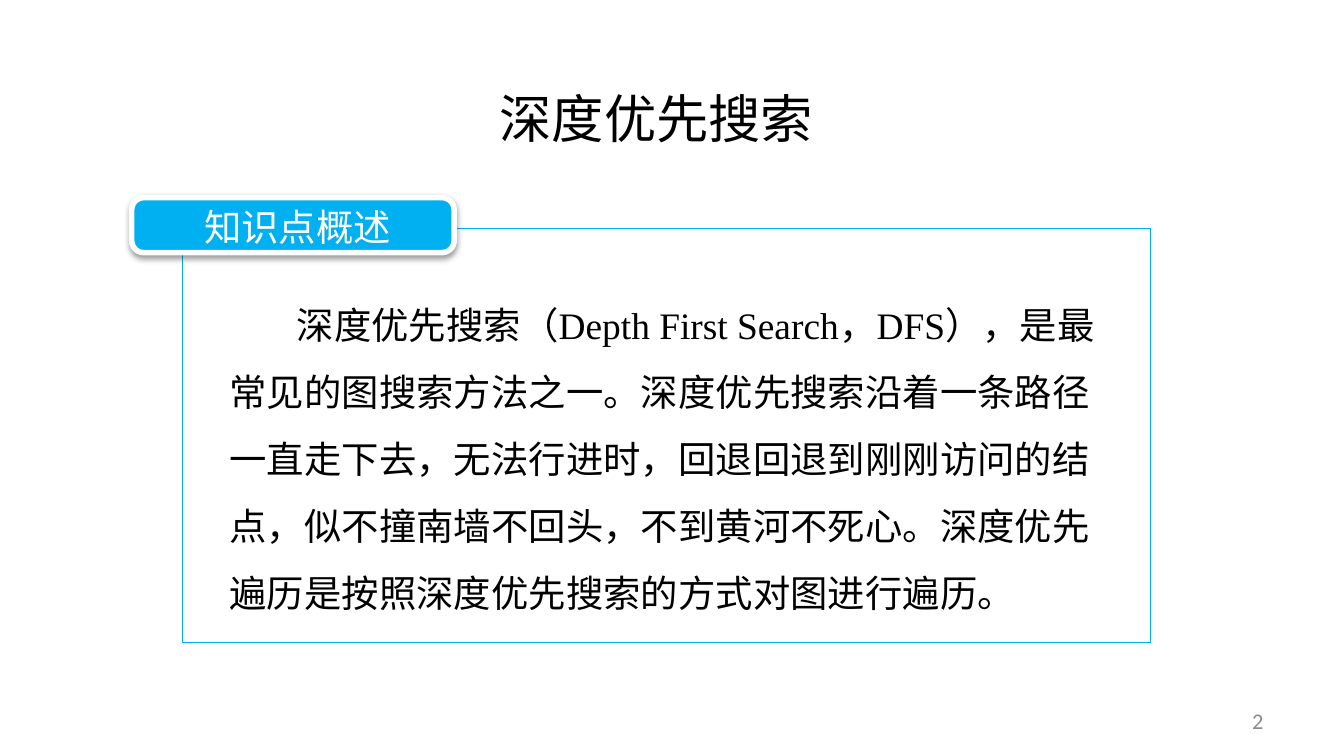
import pptx
import pptx.util
import pptx.dml.color
import pptx.enum.shapes
import pptx.enum.text
import pptx.oxml
from pptx.oxml.ns import nsdecls, qn

COLORS = {"ink": "000000", "accent": "00B0F0", "paper": "FFFFFF", "number": "8C8C8C"}
CJK, LATIN, SERIF = "Noto Sans CJK SC", "Calibri", "Times New Roman"
WIDTH = 10
HEIGHT = WIDTH * 9 / 16
ALIGN = pptx.enum.text.PP_ALIGN
ANCHOR = pptx.enum.text.MSO_ANCHOR
PRESET = pptx.enum.shapes.MSO_SHAPE

# Content: runs are (text, font); boxes are left, top, width, height in inches
TEXTS = [
    dict(box=(3.62, 0.43, 2.68, 0.74), runs=[("深度优先搜索", CJK)],
         size=28, color="ink", spacing=1.35),
    dict(box=(1.06, 1.47, 2.31, 0.44), runs=[("知识点概述", CJK)],
         size=20, color="paper", align=ALIGN.CENTER),
    dict(box=(1.61, 2.03, 6.81, 2.55), size=20, color="ink", spacing=1.5, indent=0.5,
         runs=[("深度优先搜索（", LATIN),
               ("Depth First Search，DFS", SERIF),
               ("），是最常见的图搜索方法之一。深度优先搜索沿着一条路径一直走下去，"
                "无法行进时，回退回退到刚刚访问的结点，似不撞南墙不回头，不到黄河不死心。"
                "深度优先遍历是按照深度优先搜索的方式对图进行遍历。", LATIN)]),
    dict(box=(7.17, 5.21, 2.33, 0.3), runs=[("2", LATIN)],
         size=12, color="number", align=ALIGN.RIGHT, anchor=ANCHOR.MIDDLE),
]
FRAME = dict(box=(1.36, 1.7, 7.2, 3.08), preset=PRESET.RECTANGLE,
             fill="paper", line="accent", weight=0.75)
BADGE = dict(box=(0.98, 1.47, 2.4, 0.41), preset=PRESET.ROUNDED_RECTANGLE,
             fill="accent", line="paper", weight=3)


def rgb(name):
    return pptx.dml.color.RGBColor.from_string(COLORS[name])


def inches(box):
    return [pptx.util.Inches(length) for length in box]


def add_panel(slide, box, preset, fill, line, weight):
    shape = slide.shapes.add_shape(preset, *inches(box))
    shape.shadow.inherit = False
    shape.fill.solid()
    shape.fill.fore_color.rgb = rgb(fill)
    shape.line.color.rgb = rgb(line)
    shape.line.width = pptx.util.Pt(weight)
    return shape


def add_text(slide, box, runs, size, color, align=ALIGN.LEFT,
             anchor=ANCHOR.TOP, spacing=1.0, indent=0):
    frame = slide.shapes.add_textbox(*inches(box)).text_frame
    frame.word_wrap = True
    frame.vertical_anchor = anchor
    paragraph = frame.paragraphs[0]
    paragraph.alignment = align
    paragraph.line_spacing = spacing
    if indent:
        properties = paragraph._p.get_or_add_pPr()
        properties.set("marL", "0")
        properties.set("indent", str(pptx.util.Inches(indent)))
    for text, font in runs:
        run = paragraph.add_run()
        run.text = text
        run.font.size = pptx.util.Pt(size)
        run.font.color.rgb = rgb(color)
        run.font.name = font
        east_asian = pptx.oxml.parse_xml(f'<a:ea {nsdecls("a")} typeface="{CJK}"/>')
        run._r.rPr.find(qn("a:latin")).addnext(east_asian)


def add_drop_shadow(shape):
    effects = shape._element.spPr.find(qn("a:effectLst"))
    effects.append(pptx.oxml.parse_xml(
        f'<a:outerShdw {nsdecls("a")} blurRad="{pptx.util.Pt(3.1)}" '
        f'dist="{pptx.util.Pt(1.6)}" dir="5400000" rotWithShape="0">'
        f'<a:srgbClr val="{COLORS["ink"]}"><a:alpha val="38000"/></a:srgbClr>'
        '</a:outerShdw>'))


def main():
    presentation = pptx.Presentation()
    presentation.slide_width, presentation.slide_height = inches((WIDTH, HEIGHT))
    slide = presentation.slides.add_slide(presentation.slide_layouts[6])

    # Frame with a slightly transparent fill
    frame = add_panel(slide, **FRAME)
    fill_color = frame._element.spPr.find(qn("a:solidFill"))[0]
    fill_color.append(pptx.oxml.parse_xml(f'<a:alpha {nsdecls("a")} val="90000"/>'))

    # Heading badge
    badge = add_panel(slide, **BADGE)
    badge.adjustments[0] = 0.22
    add_drop_shadow(badge)

    # Title, badge label, body and slide number
    for text in TEXTS:
        add_text(slide, **text)

    presentation.save("out.pptx")


if __name__ == "__main__":
    main()
